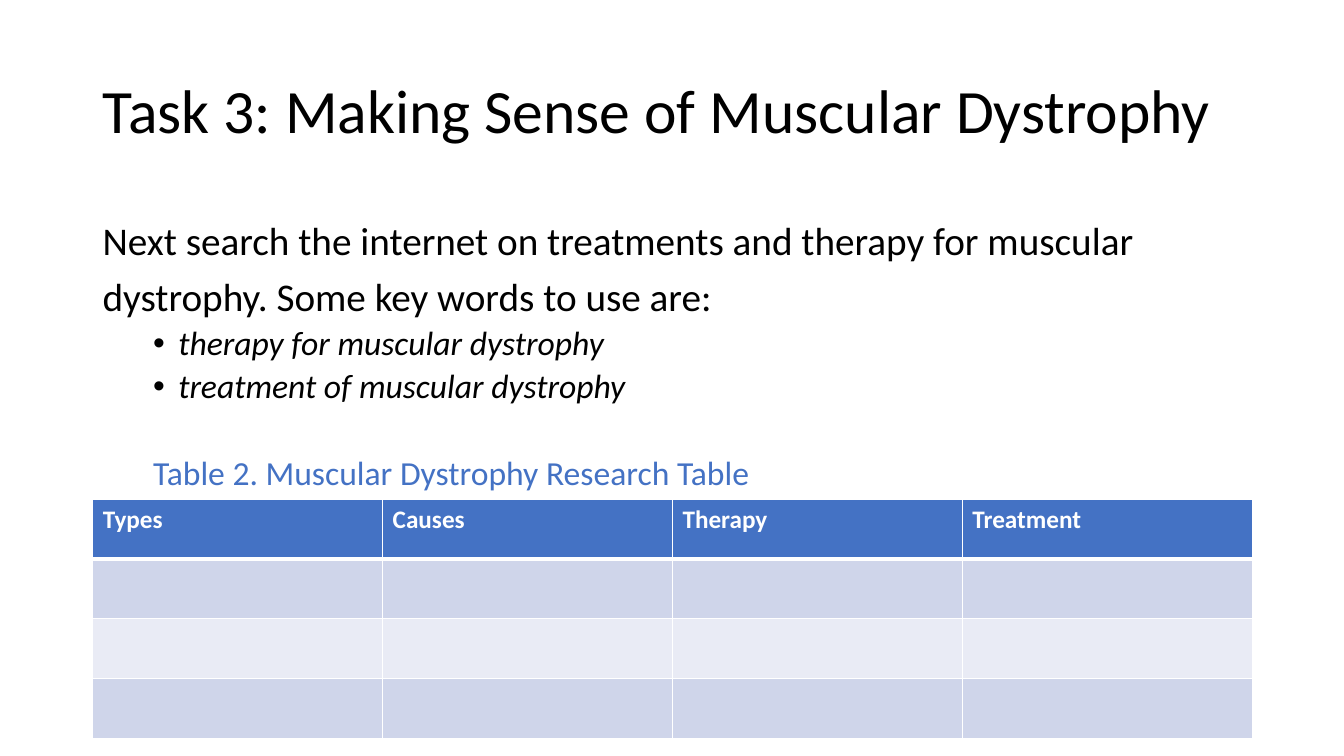
from dataclasses import dataclass

from lxml.etree import SubElement
from pptx import Presentation
from pptx.dml.color import RGBColor
from pptx.enum.text import MSO_ANCHOR, MSO_AUTO_SIZE, PP_ALIGN
from pptx.oxml.ns import qn
from pptx.util import Inches, Pt


@dataclass(frozen=True)
class Theme:
    font: str = "Calibri"
    black: str = "000000"
    white: str = "FFFFFF"
    accent: str = "4472C4"
    bands: tuple = ("CFD5EA", "E9EBF5")
    title_size: int = 44
    body_size: int = 28
    keyword_size: int = 24
    table_size: int = 18
    thin_border: int = 1
    header_border: int = 3


class SlideBuilder:
    def __init__(self, presentation, theme):
        self.theme = theme
        self.slide = presentation.slides.add_slide(presentation.slide_layouts[5])

    def add_run(self, paragraph, text, size, color, bold=False, italic=False):
        run = paragraph.add_run()
        run.text = text
        font = run.font
        font.name, font.size = self.theme.font, Pt(size)
        font.bold, font.italic = bold, italic
        font.color.rgb = RGBColor.from_string(color)

    def title(self, text, box):
        shape = self.slide.shapes.title
        shape.left, shape.top, shape.width, shape.height = map(Inches, box)
        frame = shape.text_frame
        frame.auto_size = MSO_AUTO_SIZE.NONE
        frame.vertical_anchor = MSO_ANCHOR.MIDDLE
        paragraph = frame.paragraphs[0]
        paragraph.alignment = PP_ALIGN.LEFT
        paragraph.line_spacing = 0.9
        self.add_run(paragraph, text, self.theme.title_size, self.theme.black)

    def text_box(self, box):
        frame = self.slide.shapes.add_textbox(*map(Inches, box)).text_frame
        frame.word_wrap = True
        return frame

    def format_paragraph(self, paragraph, line_spacing, space_before, margin=0, indent=0, bullet=None):
        paragraph.line_spacing = line_spacing
        paragraph.space_before = Pt(space_before)
        properties = paragraph._p.get_or_add_pPr()
        properties.set("marL", str(Inches(margin)))
        properties.set("indent", str(Inches(indent)))
        if bullet:
            SubElement(properties, qn("a:buFont"), typeface="Arial")
            SubElement(properties, qn("a:buChar"), char=bullet)

    def instructions(self, text, keywords, caption, box):
        theme = self.theme
        frame = self.text_box(box)
        paragraph = frame.paragraphs[0]
        self.format_paragraph(paragraph, 1.2, 10)
        self.add_run(paragraph, text, theme.body_size, theme.black)
        for keyword in keywords:
            paragraph = frame.add_paragraph()
            self.format_paragraph(paragraph, 0.9, 5, 0.75, -0.25, "•")
            self.add_run(paragraph, keyword, theme.keyword_size, theme.black, italic=True)
        paragraph = frame.add_paragraph()
        self.format_paragraph(paragraph, 0.9, 36, 0.5)
        self.add_run(paragraph, caption, theme.keyword_size, theme.accent)

    def set_borders(self, cell, top, bottom):
        thin = self.theme.thin_border
        properties = cell._tc.get_or_add_tcPr()
        for side, width in zip("LRTB", (thin, thin, top, bottom)):
            line = SubElement(properties, qn(f"a:ln{side}"), w=str(Pt(width)))
            fill = SubElement(line, qn("a:solidFill"))
            SubElement(fill, qn("a:srgbClr"), val=self.theme.white)

    def research_table(self, headers, empty_rows, box):
        theme = self.theme
        thin, thick = theme.thin_border, theme.header_border
        table = self.slide.shapes.add_table(
            empty_rows + 1, len(headers), *map(Inches, box)).table
        for row_index, row in enumerate(table.rows):
            is_header = row_index == 0
            color = theme.accent if is_header else theme.bands[(row_index - 1) % 2]
            for cell, header in zip(row.cells, headers):
                self.set_borders(cell, thick if row_index == 1 else thin,
                                 thick if is_header else thin)
                cell.fill.solid()
                cell.fill.fore_color.rgb = RGBColor.from_string(color)
                if is_header:
                    self.add_run(cell.text_frame.paragraphs[0], header,
                                 theme.table_size, theme.white, bold=True)


def main():
    presentation = Presentation()
    presentation.slide_width = Inches(13.33)
    presentation.slide_height = Inches(7.5)
    left, width = 0.92, 11.5

    builder = SlideBuilder(presentation, Theme())
    builder.title("Task 3: Making Sense of Muscular Dystrophy", (left, 0.4, width, 1.45))
    builder.instructions(
        "Next search the internet on treatments and therapy for muscular dystrophy. "
        "Some key words to use are:",
        ("therapy for muscular dystrophy", "treatment of muscular dystrophy"),
        "Table 2. Muscular Dystrophy Research Table",
        (left, 2, width, 4.76))
    builder.research_table(("Types", "Causes", "Therapy", "Treatment"), 3,
                           (left, 4.95, width, 2.38))
    presentation.save("out.pptx")


if __name__ == "__main__":
    main()
